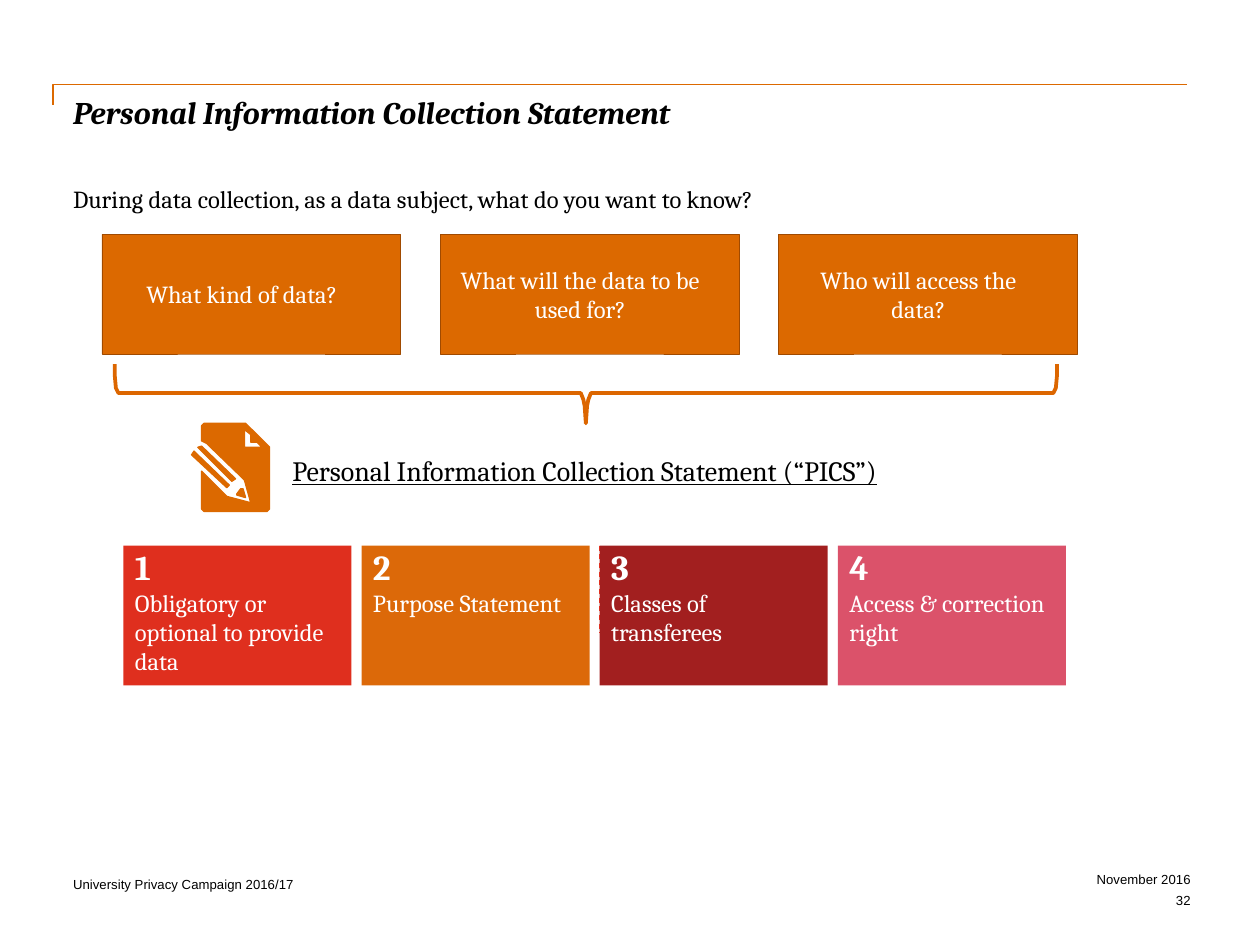
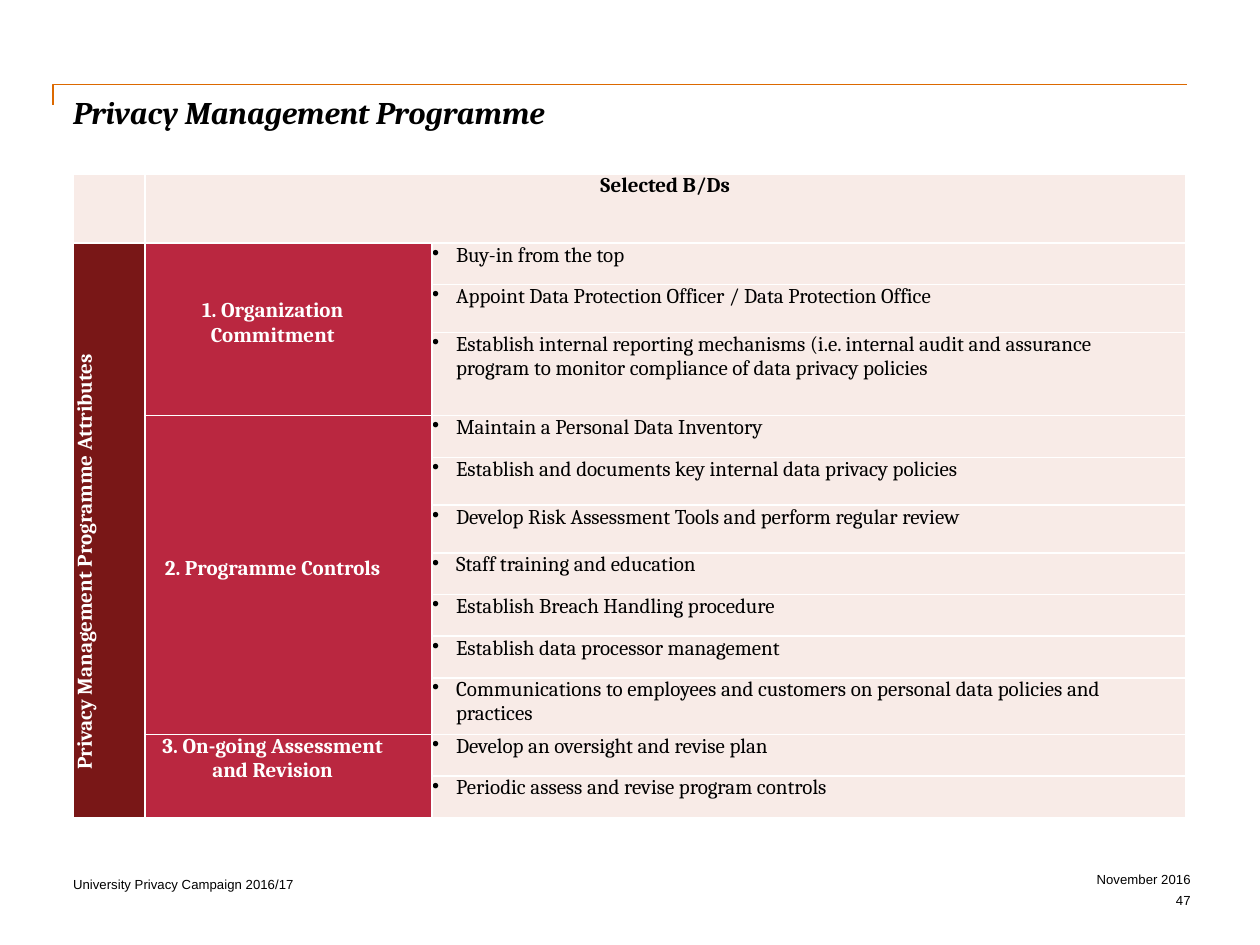
from lxml import etree
from pptx import Presentation
from pptx.dml.color import RGBColor
from pptx.enum.dml import MSO_LINE
from pptx.enum.shapes import MSO_CONNECTOR, MSO_SHAPE
from pptx.enum.text import MSO_ANCHOR as Anchor, PP_ALIGN as Align
from pptx.oxml.ns import qn
from pptx.util import Inches, Pt

BLACK = RGBColor(0x00, 0x00, 0x00)
WHITE = RGBColor(0xFF, 0xFF, 0xFF)
ORANGE = RGBColor(0xDC, 0x69, 0x00)
BRACE_ORANGE = RGBColor(0xDC, 0x66, 0x00)
CARD_ORANGE = RGBColor(0xDC, 0x69, 0x09)
BROWN = RGBColor(0xA0, 0x4A, 0x00)
RED = RGBColor(0xDF, 0x2F, 0x1E)
DARK_RED = RGBColor(0xA2, 0x1F, 0x1F)
PINK = RGBColor(0xDB, 0x52, 0x6A)
MAROON = RGBColor(0x79, 0x17, 0x17)
CRIMSON = RGBColor(0xBA, 0x27, 0x40)
BLUSH = RGBColor(0xF8, 0xEB, 0xE7)
SERIF, SANS = "Cambria", "Arial"

QUESTIONS = ["What kind of data?", "What will the data to be\vused for?",
             "Who will access the\vdata?"]
CARDS = [("Obligatory or optional to provide data", RED),
         ("Purpose Statement", CARD_ORANGE),
         ("Classes of transferees", DARK_RED),
         ("Access & correction right", PINK)]
ATTRIBUTES = [
    ("1. Organization\vCommitment", Anchor.MIDDLE, [
        ("Buy-in from the top", 0.33),
        ("Appoint Data Protection Officer / Data Protection Office", 0.38),
        ("Establish internal reporting mechanisms (i.e. internal audit and assurance\v"
         "program to monitor compliance of data privacy policies", 0.66)]),
    ("2. Programme Controls", Anchor.MIDDLE, [
        ("Maintain a Personal Data Inventory", 0.33),
        ("Establish and documents key internal data privacy policies", 0.38),
        ("Develop Risk Assessment Tools and perform regular review", 0.38),
        ("Staff training and education", 0.33),
        ("Establish Breach Handling procedure", 0.33),
        ("Establish data processor management", 0.33),
        ("Communications to employees and customers on personal data policies and\v"
         "practices", 0.45)]),
    ("3. On-going Assessment\vand Revision", Anchor.TOP, [
        ("Develop an oversight and revise plan", 0.33),
        ("Periodic assess and revise program controls", 0.33)]),
]

FOLD = [(1.94, 3.55), (1.94, 3.41), (1.99, 3.45), (1.99, 3.51), (2.04, 3.51), (2.08, 3.55)]
SHEET = [(2.14, 3.55), (1.95, 3.36), (1.62, 3.36), (1.6, 3.38), (1.6, 3.5), (1.64, 3.52),
         (1.94, 3.81), (1.99, 3.99), (1.8, 3.94), (1.6, 3.74), (1.6, 4.04), (1.62, 4.06),
         (2.12, 4.06), (2.14, 4.04)]
PENCIL_PARTS = [
    [(1.54, 3.58), (1.52, 3.61), (1.8, 3.87), (1.82, 3.85)],
    [(1.6, 3.54), (1.57, 3.55), (1.84, 3.82), (1.87, 3.8)],
    [(1.93, 3.88), (1.91, 3.88), (1.88, 3.92), (1.88, 3.93), (1.95, 3.95)],
]
HALF_BRACE = [(3.74, 2.89), (3.74, 2.97), (3.73, 3.08), (3.71, 3.12), (0.04, 3.12),
              (0.02, 3.17), (0.01, 3.22), (0, 3.36)]


def style_text(paragraph, size, color, font=SERIF, bold=False, italic=False, underline=False):
    """Format every run of a paragraph."""
    for span in paragraph.runs:
        span.font.size, span.font.name = Pt(size), font
        span.font.bold, span.font.italic, span.font.underline = bold, italic, underline
        span.font.color.rgb = color


def set_margins(holder, left=0, top=0, right=0, bottom=0):
    """Set the insets of a text frame or a table cell."""
    holder.margin_left, holder.margin_top = Inches(left), Inches(top)
    holder.margin_right, holder.margin_bottom = Inches(right), Inches(bottom)


def indent(paragraph, left, first=0):
    """Set the left margin and first-line indent of a paragraph."""
    properties = paragraph._p.get_or_add_pPr()
    properties.set("marL", str(Inches(left)))
    properties.set("indent", str(Inches(first)))


def add_text(page, left, top, width, height, text, size, **style):
    """Add a text box without insets and return its frame."""
    box = page.shapes.add_textbox(Inches(left), Inches(top), Inches(width), Inches(height))
    frame = box.text_frame
    frame.word_wrap = True
    set_margins(frame)
    frame.text = text
    for paragraph in frame.paragraphs:
        style_text(paragraph, size, BLACK, **style)
    return frame


def add_panel(page, left, top, width, height, fill, text):
    """Add a filled rectangle with text and return it."""
    panel = page.shapes.add_shape(MSO_SHAPE.RECTANGLE, Inches(left), Inches(top),
                                  Inches(width), Inches(height))
    panel.shadow.inherit = False
    panel.fill.solid()
    panel.fill.fore_color.rgb = fill
    panel.line.fill.background()
    panel.text_frame.word_wrap = True
    panel.text_frame.text = text
    return panel


def add_outline(page, points, color, width, fill=None, closed=False):
    """Draw a freeform through points given in inches."""
    start, *rest = [(Inches(x), Inches(y)) for x, y in points]
    builder = page.shapes.build_freeform(*start, scale=1.0)
    builder.add_line_segments(rest, close=closed)
    outline = builder.convert_to_shape()
    outline.shadow.inherit = False
    outline.line.color.rgb = color
    outline.line.width = Pt(width)
    if fill is None:
        outline.fill.background()
    else:
        outline.fill.solid()
        outline.fill.fore_color.rgb = fill


def add_dashed_line(page, x, top, bottom, color):
    """Draw a thin dashed vertical line."""
    line = page.shapes.add_connector(MSO_CONNECTOR.STRAIGHT, Inches(x), Inches(top),
                                     Inches(x), Inches(bottom))
    line.line.color.rgb = color
    line.line.width = Pt(0.72)
    line.line.dash_style = MSO_LINE.DASH
    etree.SubElement(line._element.spPr, qn("a:effectLst"))


def add_page(deck, title, number):
    """Add a blank slide with the shared rule, title and footers."""
    page = deck.slides.add_slide(deck.slide_layouts[6])
    add_outline(page, [(0.42, 0.83), (0.42, 0.67), (9.42, 0.67)], ORANGE, 0.96)
    add_text(page, 0.58, 0.74, 8.85, 0.61, title, 18, bold=True, italic=True)
    campaign = add_text(page, 0.58, 6.96, 1.9, 0.13, "University Privacy Campaign 2016/17",
                        7.5, font=SANS)
    dated = add_text(page, 8.45, 6.92, 1, 0.3, f"November 2016\n{number}", 7.5, font=SANS)
    campaign.paragraphs[0].line_spacing = Pt(8.6)
    for paragraph in dated.paragraphs:
        paragraph.alignment = Align.RIGHT
    dated.paragraphs[0].line_spacing = Pt(8.6)
    dated.paragraphs[1].space_before = Pt(3)
    return page


def add_question(page, left, text):
    """Add one orange question box."""
    panel = add_panel(page, left, 1.86, 2.37, 0.95, ORANGE, text)
    panel.line.color.rgb = BROWN
    panel.line.width = Pt(0.25)
    frame = panel.text_frame
    frame.vertical_anchor = Anchor.MIDDLE
    set_margins(frame, right=0.15)
    frame.paragraphs[0].alignment = Align.CENTER
    style_text(frame.paragraphs[0], 14, WHITE)


def add_card(page, left, number, label, fill):
    """Add one numbered card."""
    frame = add_panel(page, left, 4.33, 1.81, 1.11, fill, f"{number}\n{label}").text_frame
    frame.vertical_anchor = Anchor.TOP
    set_margins(frame, left=0.09, right=0.15)
    heading, body = frame.paragraphs
    heading.alignment = body.alignment = Align.LEFT
    style_text(heading, 20, WHITE, bold=True)
    style_text(body, 14, WHITE)


def add_document_icon(page):
    """Draw a sheet of paper with a pencil."""
    add_outline(page, SHEET, ORANGE, 0.72, ORANGE, True)
    add_outline(page, FOLD, ORANGE, 0.72, WHITE, True)
    for part in PENCIL_PARTS:
        add_outline(page, part, ORANGE, 0.72, ORANGE, True)


def style_cell(cell, fill):
    """Fill a cell, clear its insets and give it white borders."""
    set_margins(cell)
    cell.fill.solid()
    cell.fill.fore_color.rgb = fill
    properties = cell._tc.get_or_add_tcPr()
    for place, side in enumerate(("lnL", "lnR", "lnT", "lnB")):
        border = etree.Element(qn(f"a:{side}"), w=str(Pt(1)))
        solid = etree.SubElement(border, qn("a:solidFill"))
        etree.SubElement(solid, qn("a:srgbClr"), val=str(WHITE))
        properties.insert(place, border)


def write_cell(cell, text, color, bold=False, align=Align.LEFT):
    """Write a cell's text and return its paragraph."""
    cell.text_frame.text = text
    paragraph = cell.text_frame.paragraphs[0]
    paragraph.alignment = align
    style_text(paragraph, 12, color, bold=bold)
    return paragraph


def write_bullet(cell, text):
    """Write a bulleted measure in a cell."""
    paragraph = write_cell(cell, text, BLACK)
    indent(paragraph, 0.19, -0.19)
    etree.SubElement(paragraph._p.get_or_add_pPr(), qn("a:buChar"), char="•")


def add_attribute_table(page):
    """Add the table of programme attributes and measures."""
    heights = [0.55] + [height for _, _, items in ATTRIBUTES for _, height in items]
    widths = [0.57, 2.28, 5.98]
    table = page.shapes.add_table(len(heights), len(widths), Inches(0.58), Inches(1.38),
                                  Inches(sum(widths)), Inches(sum(heights))).table
    table.first_row = table.horz_banding = False
    for column, width in zip(table.columns, widths):
        column.width = Inches(width)
    for index, height in enumerate(heights):
        table.rows[index].height = Inches(height)
        fills = (MAROON, CRIMSON, BLUSH) if index else (BLUSH,) * 3
        for column, fill in enumerate(fills):
            style_cell(table.cell(index, column), fill)

    table.cell(0, 1).merge(table.cell(0, 2))
    write_cell(table.cell(0, 1), "Selected B/Ds", BLACK, True, Align.CENTER)
    side = table.cell(1, 0)
    side.merge(table.cell(len(heights) - 1, 0))
    indent(write_cell(side, "Privacy Management Programme Attributes", WHITE, True), 0.38)
    side.vertical_anchor = Anchor.MIDDLE
    side._tc.get_or_add_tcPr().set("vert", "vert270")

    first = 1
    for heading, anchor, items in ATTRIBUTES:
        group = table.cell(first, 1)
        group.merge(table.cell(first + len(items) - 1, 1))
        write_cell(group, heading, WHITE, True, Align.CENTER)
        set_margins(group, right=0.25, bottom=0.1)
        group.vertical_anchor = anchor
        for index, (text, _) in enumerate(items, first):
            write_bullet(table.cell(index, 2), text)
        first += len(items)


def build_statement_page(deck):
    """Build the slide on the collection statement."""
    page = add_page(deck, "Personal Information Collection Statement", 32)
    add_text(page, 0.58, 1.46, 6.5, 0.25,
             "During data collection, as a data subject, what do you want to know?", 14)
    for index, question in enumerate(QUESTIONS):
        add_question(page, 0.81 + 2.685 * index, question)
    right = [(4.65 + x, y) for x, y in HALF_BRACE]
    left = [(4.65 - x, y) for x, y in reversed(HALF_BRACE[:-1])]
    add_outline(page, right + left, BRACE_ORANGE, 2.16)
    add_document_icon(page)
    add_text(page, 2.32, 3.6, 5.15, 0.28,
             "Personal Information Collection Statement (“PICS”)", 16, underline=True)
    for index, (label, fill) in enumerate(CARDS):
        add_card(page, 0.98 + 1.89 * index, index + 1, label, fill)
    add_dashed_line(page, 4.76, 4.33, 5.02, RED)


def build_programme_page(deck):
    """Build the slide on the management programme."""
    page = add_page(deck, "Privacy Management Programme", 47)
    add_attribute_table(page)


def main():
    """Build and save the deck."""
    deck = Presentation()
    deck.slide_width, deck.slide_height = Inches(10), Inches(7.5)
    build_statement_page(deck)
    build_programme_page(deck)
    deck.save("out.pptx")


if __name__ == "__main__":
    main()
